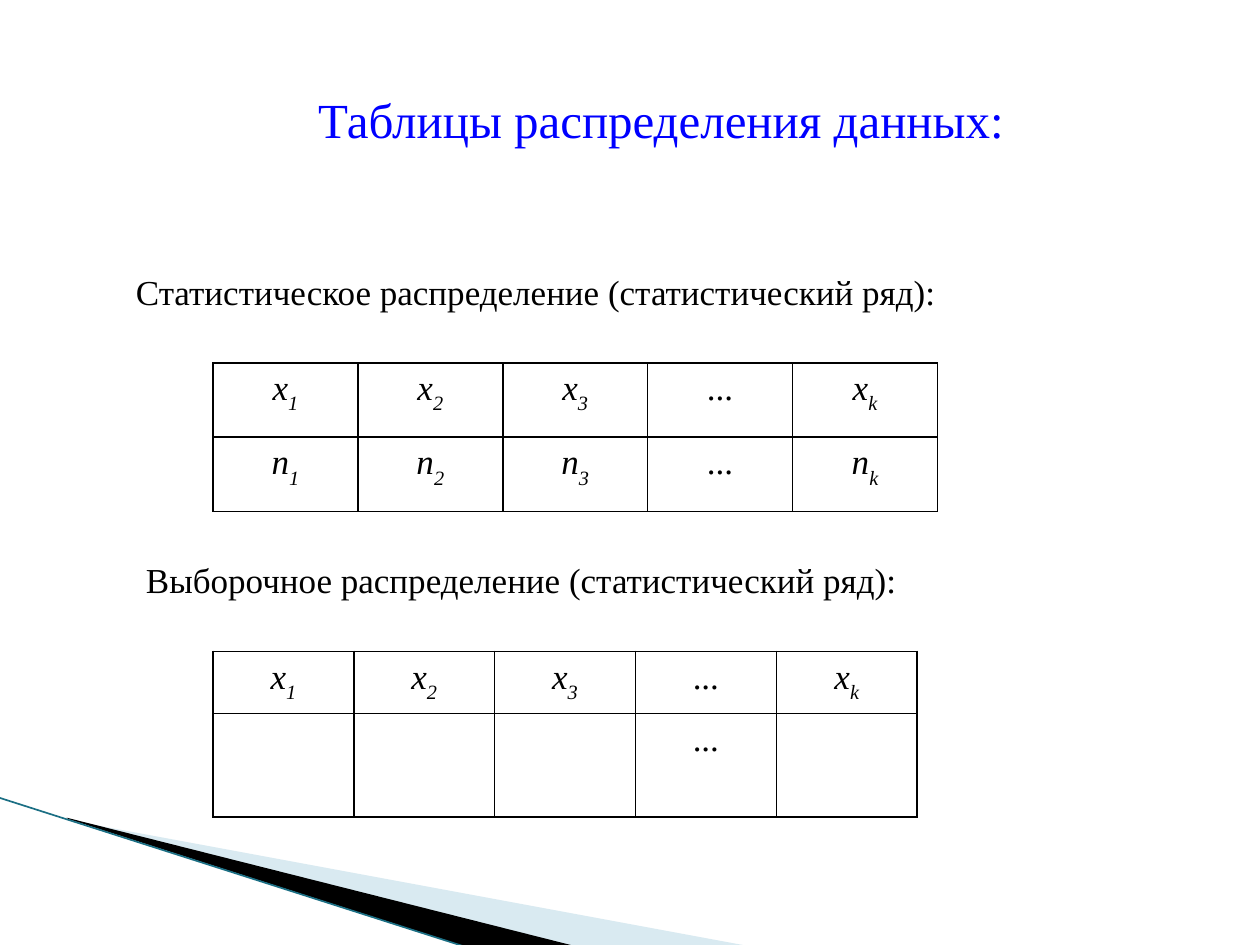
import lxml.etree
import pptx
import pptx.dml.color
import pptx.enum.shapes
import pptx.enum.text
import pptx.oxml
import pptx.oxml.ns
import pptx.util

Inches = pptx.util.Inches
Pt = pptx.util.Pt
ALIGN = pptx.enum.text.PP_ALIGN
qn = pptx.oxml.ns.qn

COLORS = {
    "title": "0000FF",
    "text": "000000",
    "border": "000000",
    "pale": "A0CBDC",
    "dark": "000000",
    "edge": "1B6F84",
}
FONT = "Times New Roman"
VALUES = ["x_1", "x_2", "x_3", "...", "x_k"]
COUNTS = ["n_1", "n_2", "n_3", "...", "n_k"]
SHARES = ["", "", "", "...", ""]


def rgb(name):
    return pptx.dml.color.RGBColor.from_string(COLORS[name])


def style_paragraph(para, size, color, align):
    para.alignment = align
    para.font.name = FONT
    para.font.size = Pt(size)
    para.font.color.rgb = rgb(color)


def place(shape, left, top, width, height):
    shape.left, shape.top = Inches(left), Inches(top)
    shape.width, shape.height = Inches(width), Inches(height)


def reframe(wedge, left, top, width, height):
    shift_x = wedge.left - Inches(left)
    shift_y = wedge.top - Inches(top)
    place(wedge, left, top, width, height)
    outline = wedge._element.spPr.find(".//" + qn("a:path"))
    outline.set("w", str(wedge.width))
    outline.set("h", str(wedge.height))
    for point in outline.iter(qn("a:pt")):
        point.set("x", str(int(point.get("x")) + shift_x))
        point.set("y", str(int(point.get("y")) + shift_y))


def add_wedge(page, points, frame, color, alpha=None):
    corners = [(Inches(x), Inches(y)) for x, y in points]
    builder = page.shapes.build_freeform(*corners[0])
    builder.add_line_segments(corners[1:], close=True)
    wedge = builder.convert_to_shape()
    reframe(wedge, *frame)
    wedge.shadow.inherit = False
    wedge.line.fill.background()
    wedge.fill.solid()
    wedge.fill.fore_color.rgb = rgb(color)
    if alpha is not None:
        tint = wedge._element.spPr.find(".//" + qn("a:srgbClr"))
        lxml.etree.SubElement(tint, qn("a:alpha"), val=str(alpha * 1000))


def add_corner(page):
    add_wedge(page, [(0.55, 6.51), (5.95, 7.51), (4.56, 7.51), (0.55, 6.5)],
              (0.78, 5.47, 4.16, 1.58), "pale", 40)
    add_wedge(page, [(0.53, 6.49), (4.57, 7.51), (3.72, 7.52), (0.54, 6.5)],
              (-0.06, 6.33, 4.16, 0.92), "dark")
    edge = page.shapes.add_connector(
        pptx.enum.shapes.MSO_CONNECTOR.STRAIGHT,
        Inches(-0.01), Inches(6.33), Inches(3.71), Inches(7.52))
    edge.line.color.rgb = rgb("edge")
    edge.line.width = Pt(0.95)
    lxml.etree.SubElement(edge._element.spPr, qn("a:effectLst"))


def add_title(page, text, left, top, width, height):
    title = page.shapes.title
    place(title, left, top, width, height)
    frame = title.text_frame
    frame.text = text
    frame.vertical_anchor = pptx.enum.text.MSO_ANCHOR.TOP
    frame.auto_size = pptx.enum.text.MSO_AUTO_SIZE.NONE
    style_paragraph(frame.paragraphs[0], 28, "title", ALIGN.CENTER)


def add_caption(page, text, left, top, width, height):
    box = page.shapes.add_textbox(
        Inches(left), Inches(top), Inches(width), Inches(height))
    box.text_frame.word_wrap = True
    box.text_frame.text = text
    style_paragraph(box.text_frame.paragraphs[0], 20, "text", ALIGN.LEFT)


def border_cell(cell):
    properties = cell._tc.get_or_add_tcPr()
    for index, side in enumerate(("a:lnL", "a:lnR", "a:lnT", "a:lnB")):
        line = properties.makeelement(qn(side), {"w": str(Pt(1))})
        fill = lxml.etree.SubElement(line, qn("a:solidFill"))
        lxml.etree.SubElement(fill, qn("a:srgbClr"), val=COLORS["border"])
        properties.insert(index, line)


def write_symbol(cell, symbol):
    para = cell.text_frame.paragraphs[0]
    style_paragraph(para, 20, "text", ALIGN.CENTER)
    base, _, index = symbol.partition("_")
    if base:
        span = para.add_run()
        span.text = base
        span.font.italic = bool(index)
    if index:
        span = para.add_run()
        span.text = index
        span.font.italic = True
        span._r.get_or_add_rPr().set("baseline", "-30000")


def add_distribution(page, rows, heights, left, top, width):
    columns = len(rows[0])
    table = page.shapes.add_table(
        len(rows), columns, Inches(left), Inches(top),
        Inches(width), Inches(sum(heights))).table
    table.first_row = False
    table.horz_banding = False
    for column in table.columns:
        column.width = Inches(width / columns)
    for row, height, symbols in zip(table.rows, heights, rows):
        row.height = Inches(height)
        for cell, symbol in zip(row.cells, symbols):
            cell.fill.background()
            border_cell(cell)
            write_symbol(cell, symbol)


def main():
    deck = pptx.Presentation()
    deck.slide_width, deck.slide_height = Inches(10), Inches(7.5)
    page = deck.slides.add_slide(deck.slide_layouts[5])
    add_corner(page)
    add_title(page, "Таблицы распределения данных:", 0.59, 0.66, 9.31, 0.57)
    add_caption(page, "Статистическое распределение (статистический ряд):",
                0.98, 2.1, 8.03, 0.43)
    add_distribution(page, [VALUES, COUNTS], [0.59, 0.59], 1.69, 2.88, 5.75)
    add_caption(page, "Выборочное распределение (статистический ряд):",
                1.06, 4.38, 8.03, 0.43)
    add_distribution(page, [VALUES, SHARES], [0.44, 0.82], 1.69, 5.17, 5.59)
    deck.save("out.pptx")


if __name__ == "__main__":
    main()
